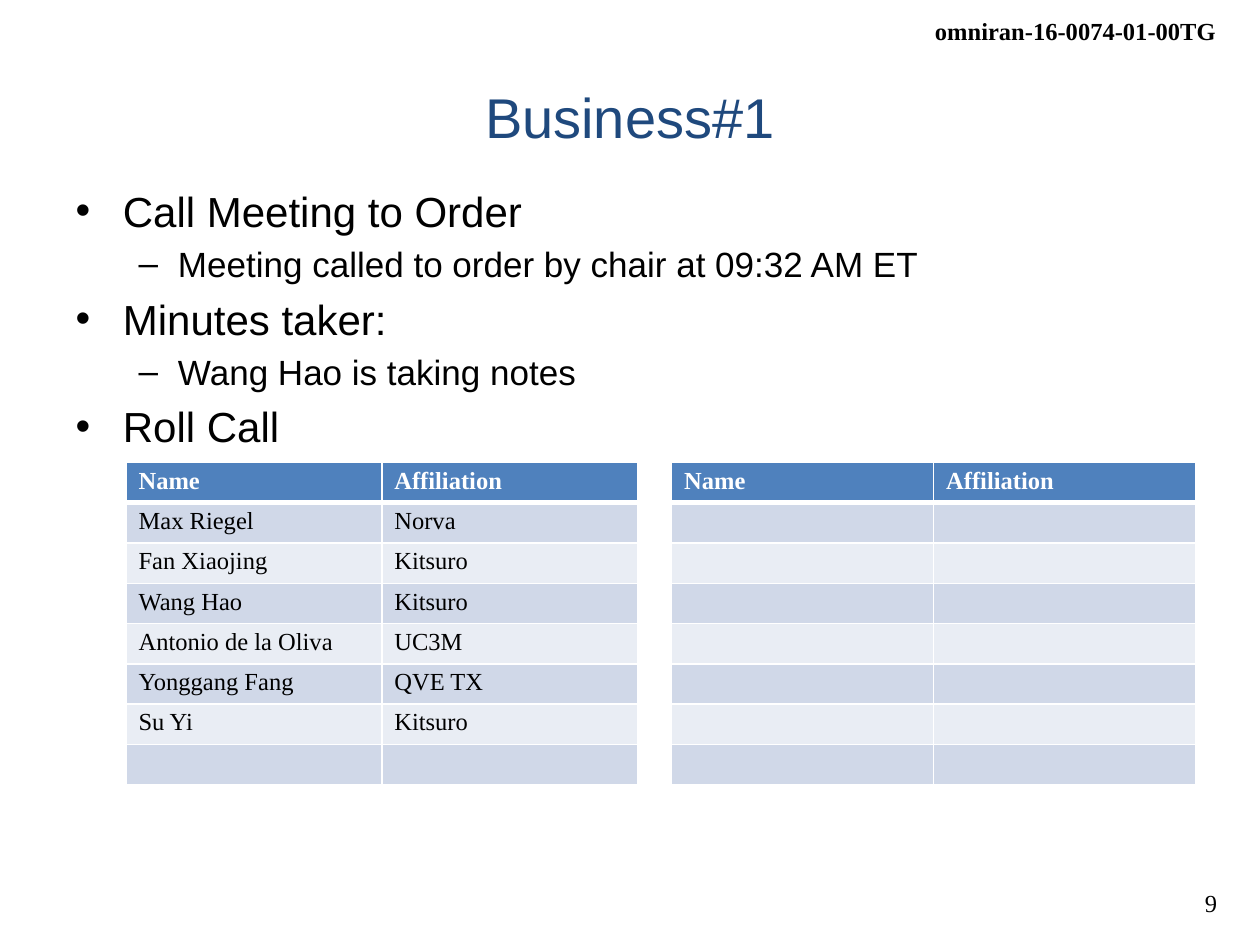
import pptx
import pptx.dml.color
import pptx.enum.text
import pptx.oxml
import pptx.oxml.ns
import pptx.util
from pptx.util import Inches

RGBColor = pptx.dml.color.RGBColor
ALIGN = pptx.enum.text.PP_ALIGN
ANCHOR = pptx.enum.text.MSO_ANCHOR

BLACK = RGBColor(0x00, 0x00, 0x00)
WHITE = RGBColor(0xFF, 0xFF, 0xFF)
NAVY = RGBColor(0x1F, 0x49, 0x7D)
HEADER_BLUE = RGBColor(0x4F, 0x81, 0xBD)
BANDS = (RGBColor(0xD0, 0xD8, 0xE8), RGBColor(0xE9, 0xED, 0xF4))

AGENDA = [
    (0, "Call Meeting to Order"),
    (1, "Meeting called to order by chair at 09:32 AM ET"),
    (0, "Minutes taker:"),
    (1, "Wang Hao is taking notes"),
    (0, "Roll Call"),
]
ATTENDEES = [
    ("Max Riegel", "Norva"),
    ("Fan Xiaojing", "Kitsuro"),
    ("Wang Hao", "Kitsuro"),
    ("Antonio de la Oliva", "UC3M"),
    ("Yonggang Fang", "QVE TX"),
    ("Su Yi", "Kitsuro"),
]
ROLL_CALL_ROWS = 8
COLUMN_WIDTHS = (2.03, 2.03, 0.27, 2.08, 2.08)
GAP_COLUMN = 2


class SlideBuilder:
    heading_font = "Arial"
    text_font = "Times New Roman"
    small = 14
    agenda_sizes = (24, 20)

    def __init__(self, slide):
        self.slide = slide

    def add_run(self, paragraph, text, size, font, color=BLACK, bold=False):
        run = paragraph.add_run()
        run.text = text
        run.font.size = pptx.util.Pt(size)
        run.font.name = font
        run.font.color.rgb = color
        run.font.bold = bold

    def place(self, shape, left, top, width, height):
        shape.left, shape.top = Inches(left), Inches(top)
        shape.width, shape.height = Inches(width), Inches(height)

    def title(self, text, *box):
        heading = self.slide.shapes.title
        self.place(heading, *box)
        heading.text_frame.vertical_anchor = ANCHOR.MIDDLE
        paragraph = heading.text_frame.paragraphs[0]
        paragraph.alignment = ALIGN.CENTER
        self.add_run(paragraph, text, 32, self.heading_font, NAVY)

    def bullets(self, items, *box):
        body = self.slide.placeholders[1]
        self.place(body, *box)
        frame = body.text_frame
        for index, (level, text) in enumerate(items):
            paragraph = frame.add_paragraph() if index else frame.paragraphs[0]
            paragraph.level = level
            self.add_run(paragraph, text, self.agenda_sizes[level], self.heading_font)

    def corner_text(self, text, *box, bold=False):
        frame = self.slide.shapes.add_textbox(*map(Inches, box)).text_frame
        frame.word_wrap = False
        frame.auto_size = pptx.enum.text.MSO_AUTO_SIZE.SHAPE_TO_FIT_TEXT
        paragraph = frame.paragraphs[0]
        paragraph.alignment = ALIGN.RIGHT
        self.add_run(paragraph, text, self.small, self.text_font, bold=bold)

    def borders(self, cell, **widths):
        properties = cell._tc.get_or_add_tcPr()
        for side in "LRTB":
            width = pptx.util.Pt(widths.get(side, 1))
            properties.append(pptx.oxml.parse_xml(
                f'<a:ln{side} {pptx.oxml.ns.nsdecls("a")} w="{width}"><a:solidFill>'
                f'<a:srgbClr val="{WHITE}"/></a:solidFill></a:ln{side}>'))

    def cell(self, cell, text, fill, color, bold, **border_widths):
        self.borders(cell, **border_widths)
        cell.fill.solid()
        cell.fill.fore_color.rgb = fill
        cell.margin_top = cell.margin_bottom = Inches(0.04)
        paragraph = cell.text_frame.paragraphs[0]
        if text:
            self.add_run(paragraph, text, self.small, self.text_font, color, bold)
        else:
            # Keeps an empty cell from growing to the default text size.
            paragraph._p.append(pptx.oxml.parse_xml(
                f'<a:endParaRPr {pptx.oxml.ns.nsdecls("a")} sz="{self.small * 100}"/>'))

    def roll_call(self, attendees, left, top, row_height):
        """Two name lists side by side, parted by a white column."""
        table = self.slide.shapes.add_table(
            ROLL_CALL_ROWS, len(COLUMN_WIDTHS), Inches(left), Inches(top),
            Inches(sum(COLUMN_WIDTHS)), Inches(row_height * ROLL_CALL_ROWS)).table
        for column, width in zip(table.columns, COLUMN_WIDTHS):
            column.width = Inches(width)
        header = ("Name", "Affiliation", "", "Name", "Affiliation")
        rows = [header, *attendees]
        for r in range(ROLL_CALL_ROWS):
            table.rows[r].height = Inches(row_height)
            texts = rows[r] if r < len(rows) else ()
            is_header = r == 0
            row_fill = HEADER_BLUE if is_header else BANDS[(r - 1) % 2]
            for c in range(len(COLUMN_WIDTHS)):
                self.cell(
                    table.cell(r, c),
                    texts[c] if c < len(texts) else "",
                    WHITE if c == GAP_COLUMN else row_fill,
                    WHITE if is_header else BLACK,
                    is_header,
                    T=3 if r == 1 else 1,
                    B=3 if is_header else 1)


def main():
    deck = pptx.Presentation()
    deck.slide_width, deck.slide_height = Inches(10), Inches(7.5)
    builder = SlideBuilder(deck.slides.add_slide(deck.slide_layouts[1]))
    builder.corner_text("omniran-16-0074-01-00TG", 7.3, 0.08, 2.45, 0.34, bold=True)
    builder.corner_text("9", 9.33, 7, 0.43, 0.34)
    builder.title("Business#1", 0.5, 0.3, 9, 1.25)
    builder.bullets(AGENDA, 0.5, 1.42, 9, 2.83)
    builder.roll_call(ATTENDEES, 1, 3.67, 0.32)
    deck.save("out.pptx")


if __name__ == "__main__":
    main()
